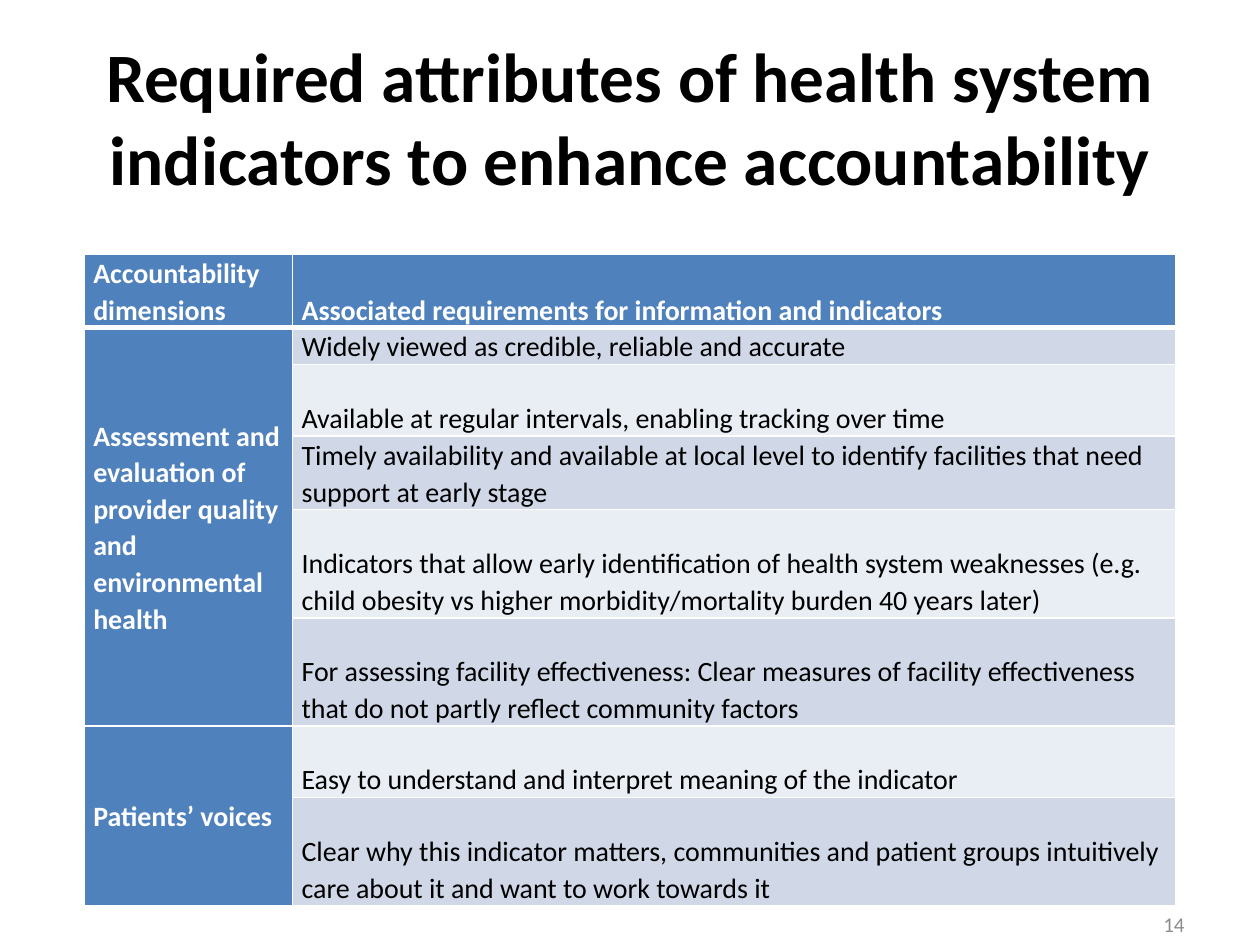
from dataclasses import dataclass

from pptx import Presentation
from pptx.dml.color import RGBColor
from pptx.enum import text as t
from pptx.oxml import ns
from pptx.util import Cm, Pt
from lxml import etree

FONT = "Calibri"
WHITE, BLACK, GREY = "FFFFFF", "000000", "8C8C8C"
HEADER_BLUE = "4F81BD"
BANDS = ("D0D8E8", "E9EDF4")


@dataclass
class Requirement:
    wording: str
    height: float  # cm


@dataclass
class Dimension:
    name: str
    requirements: list[Requirement]


HEADINGS = ("Accountability dimensions",
            "Associated requirements for information and indicators")
HEADER_HEIGHT = 1.47
COLUMN_WIDTHS = (4.2, 17.8)
DIMENSIONS = [
    Dimension("Assessment and evaluation of provider quality and environmental health", [
        Requirement("Widely viewed as credible, reliable and accurate", 0.72),
        Requirement("Available at regular intervals, enabling tracking over time", 1.44),
        Requirement("Timely availability and available at local level to identify "
                    "facilities that need support at early stage", 1.49),
        Requirement("Indicators that allow early identification of health system weaknesses "
                    "(e.g. child obesity vs higher morbidity/mortality burden 40 years later)", 2.18),
        Requirement("For assessing facility effectiveness: Clear measures of facility "
                    "effectiveness that do not partly reflect community factors", 2.18),
    ]),
    Dimension("Patients’ voices", [
        Requirement("Easy to understand and interpret meaning of the indicator", 1.44),
        Requirement("Clear why this indicator matters, communities and patient groups "
                    "intuitively care about it and want to work towards it", 2.18),
    ]),
]


def rgb(colour: str) -> RGBColor:
    return RGBColor.from_string(colour)


def add_run(paragraph, wording: str, size: float, colour: str, bold: bool = False) -> None:
    run = paragraph.add_run()
    run.text = wording
    run.font.name = FONT
    run.font.size = Pt(size)
    run.font.bold = bold
    run.font.color.rgb = rgb(colour)


def set_borders(cell, bottom: float = 1, top: float = 1) -> None:
    properties = cell._tc.get_or_add_tcPr()
    for side, width in (("L", 1), ("R", 1), ("T", top), ("B", bottom)):
        line = etree.SubElement(properties, ns.qn(f"a:ln{side}"), w=str(Pt(width)))
        fill = etree.SubElement(line, ns.qn("a:solidFill"))
        etree.SubElement(fill, ns.qn("a:srgbClr"), val=WHITE)


def style_cell(cell, fill: str, bottom: float = 1, top: float = 1) -> None:
    cell.margin_left = cell.margin_right = Cm(0.18)
    cell.margin_top = cell.margin_bottom = 0
    set_borders(cell, bottom, top)
    cell.fill.solid()
    cell.fill.fore_color.rgb = rgb(fill)


def write_cell(cell, wording: str, colour: str, bold: bool, anchor) -> None:
    cell.vertical_anchor = anchor
    paragraph = cell.text_frame.paragraphs[0]
    paragraph.line_spacing = 1.07
    paragraph.space_after = Pt(6)
    add_run(paragraph, wording, 16, colour, bold)


def add_title(slide, wording: str) -> None:
    title = slide.shapes.title
    title.left, title.top, title.width, title.height = Cm(1.27), Cm(0.76), Cm(22.86), Cm(3.18)
    frame = title.text_frame
    frame.auto_size = t.MSO_AUTO_SIZE.NONE
    frame.vertical_anchor = t.MSO_ANCHOR.MIDDLE
    frame.paragraphs[0].alignment = t.PP_ALIGN.CENTER
    add_run(frame.paragraphs[0], wording, 39.6, BLACK, bold=True)


def add_page_number(slide, number: str) -> None:
    # Sits in the strip below the table
    page_number = slide.shapes.add_textbox(Cm(18.2), Cm(18.25), Cm(5.93), Cm(0.75))
    frame = page_number.text_frame
    frame.word_wrap = True
    frame.margin_top = frame.margin_bottom = 0
    frame.vertical_anchor = t.MSO_ANCHOR.MIDDLE
    frame.paragraphs[0].alignment = t.PP_ALIGN.RIGHT
    add_run(frame.paragraphs[0], number, 12, GREY)


def add_requirements_table(slide) -> None:
    heights = [HEADER_HEIGHT] + [r.height for d in DIMENSIONS for r in d.requirements]
    table = slide.shapes.add_table(len(heights), len(COLUMN_WIDTHS), Cm(1.7), Cm(5.13),
                                   Cm(sum(COLUMN_WIDTHS)), Cm(sum(heights))).table
    for column, width in zip(table.columns, COLUMN_WIDTHS):
        column.width = Cm(width)
    for row, height in zip(table.rows, heights):
        row.height = Cm(height)

    # Header row
    for column, heading in enumerate(HEADINGS):
        cell = table.cell(0, column)
        style_cell(cell, HEADER_BLUE, bottom=3)
        write_cell(cell, heading, WHITE, True, t.MSO_ANCHOR.BOTTOM)

    # One merged dimension cell beside its banded requirements
    first = 1
    for dimension in DIMENSIONS:
        last = first + len(dimension.requirements) - 1
        for row, requirement in enumerate(dimension.requirements, first):
            top = 3 if row == 1 else 1
            style_cell(table.cell(row, 0), HEADER_BLUE, top=top)
            cell = table.cell(row, 1)
            style_cell(cell, BANDS[(row - 1) % 2], top=top)
            write_cell(cell, requirement.wording, BLACK, False, t.MSO_ANCHOR.BOTTOM)
        table.cell(first, 0).merge(table.cell(last, 0))
        write_cell(table.cell(first, 0), dimension.name, WHITE, True, t.MSO_ANCHOR.MIDDLE)
        first = last + 1


def main() -> None:
    deck = Presentation()
    deck.slide_width, deck.slide_height = Cm(25.4), Cm(19.05)
    slide = deck.slides.add_slide(deck.slide_layouts[5])
    add_title(slide, "Required attributes of health system indicators to enhance accountability")
    add_requirements_table(slide)
    add_page_number(slide, "14")
    deck.save("out.pptx")


if __name__ == "__main__":
    main()
